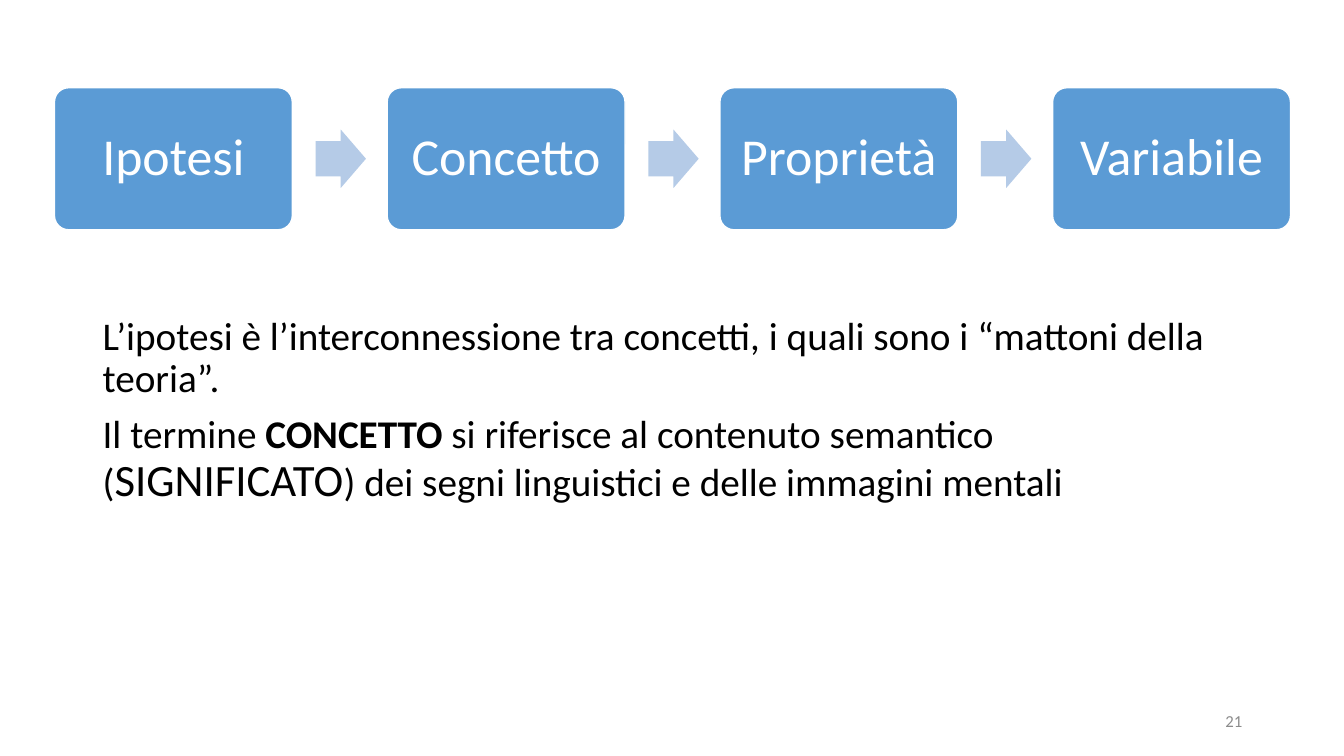
from pptx import Presentation
from pptx.dml.color import RGBColor
from pptx.enum.shapes import MSO_SHAPE
from pptx.enum.text import MSO_ANCHOR, PP_ALIGN
from pptx.util import Inches, Pt

COLORS = {
    "step": "5B9BD5",
    "arrow": "B5CBE7",
    "white": "FFFFFF",
    "body": "000000",
    "number": "8C8C8C",
}
FONT = "Calibri"

STEPS = ["Ipotesi", "Concetto", "Proprietà", "Variabile"]
STEP_LEFT, STEP_TOP, STEP_WIDTH, STEP_HEIGHT = 0.54, 0.87, 2.36, 1.41
STEP_PITCH = 3.3
ARROW_WIDTH, ARROW_HEIGHT = 0.5, 0.58
ARROW_OFFSET = STEP_WIDTH + 0.23

# Each paragraph is a list of runs: (text, size, bold)
DEFINITIONS = [
    [("L’ipotesi è l’interconnessione tra concetti, i quali sono i “mattoni della teoria”.", 28, False)],
    [
        ("Il termine ", 28, False),
        ("CONCETTO", 28, True),
        (" si riferisce al contenuto semantico (", 28, False),
        ("SIGNIFICATO", 32, False),
        (") dei segni linguistici e delle immagini mentali", 28, False),
    ],
]


class SlideBuilder:
    def __init__(self, slide):
        self.slide = slide

    def color(self, name):
        return RGBColor.from_string(COLORS[name])

    def add_runs(self, paragraph, runs, color, align, line_spacing=None):
        paragraph.alignment = align
        paragraph.line_spacing = line_spacing
        for text, size, bold in runs:
            run = paragraph.add_run()
            run.text = text
            run.font.name = FONT
            run.font.size = Pt(size)
            run.font.bold = bold
            run.font.color.rgb = self.color(color)

    def shape(self, kind, box, fill, adjustments):
        shape = self.slide.shapes.add_shape(kind, *map(Inches, box))
        shape.shadow.inherit = False
        shape.fill.solid()
        shape.fill.fore_color.rgb = self.color(fill)
        for index, value in enumerate(adjustments):
            shape.adjustments[index] = value
        return shape

    def step(self, box, label):
        step = self.shape(MSO_SHAPE.ROUNDED_RECTANGLE, box, "step", [0.1])
        step.line.color.rgb = self.color("white")
        step.line.width = Pt(1)
        frame = step.text_frame
        frame.word_wrap = False
        frame.vertical_anchor = MSO_ANCHOR.MIDDLE
        self.add_runs(frame.paragraphs[0], [(label, 37, False)], "white", PP_ALIGN.CENTER, 0.9)

    def arrow(self, box):
        arrow = self.shape(MSO_SHAPE.RIGHT_ARROW, box, "arrow", [0.6, 0.5])
        arrow.line.fill.background()

    def text(self, box, paragraphs, color, align=PP_ALIGN.LEFT, anchor=MSO_ANCHOR.TOP,
             line_spacing=None, space_before=0):
        frame = self.slide.shapes.add_textbox(*map(Inches, box)).text_frame
        frame.word_wrap = True
        frame.vertical_anchor = anchor
        for index, runs in enumerate(paragraphs):
            paragraph = frame.add_paragraph() if index else frame.paragraphs[0]
            paragraph.space_before = Pt(space_before)
            self.add_runs(paragraph, runs, color, align, line_spacing)


def main():
    presentation = Presentation()
    presentation.slide_width = Inches(13.33)
    presentation.slide_height = Inches(7.5)
    builder = SlideBuilder(presentation.slides.add_slide(presentation.slide_layouts[6]))

    builder.text((0.92, 3.09, 11.5, 4.26), DEFINITIONS, "body", line_spacing=0.9, space_before=10)
    builder.text((9.42, 6.95, 3, 0.4), [[("21", 12, False)]], "number",
                 align=PP_ALIGN.RIGHT, anchor=MSO_ANCHOR.MIDDLE)

    arrow_top = STEP_TOP + (STEP_HEIGHT - ARROW_HEIGHT) / 2
    for index, label in enumerate(STEPS):
        left = STEP_LEFT + index * STEP_PITCH
        builder.step((left, STEP_TOP, STEP_WIDTH, STEP_HEIGHT), label)
        if index < len(STEPS) - 1:
            builder.arrow((left + ARROW_OFFSET, arrow_top, ARROW_WIDTH, ARROW_HEIGHT))

    presentation.save("out.pptx")


if __name__ == "__main__":
    main()
